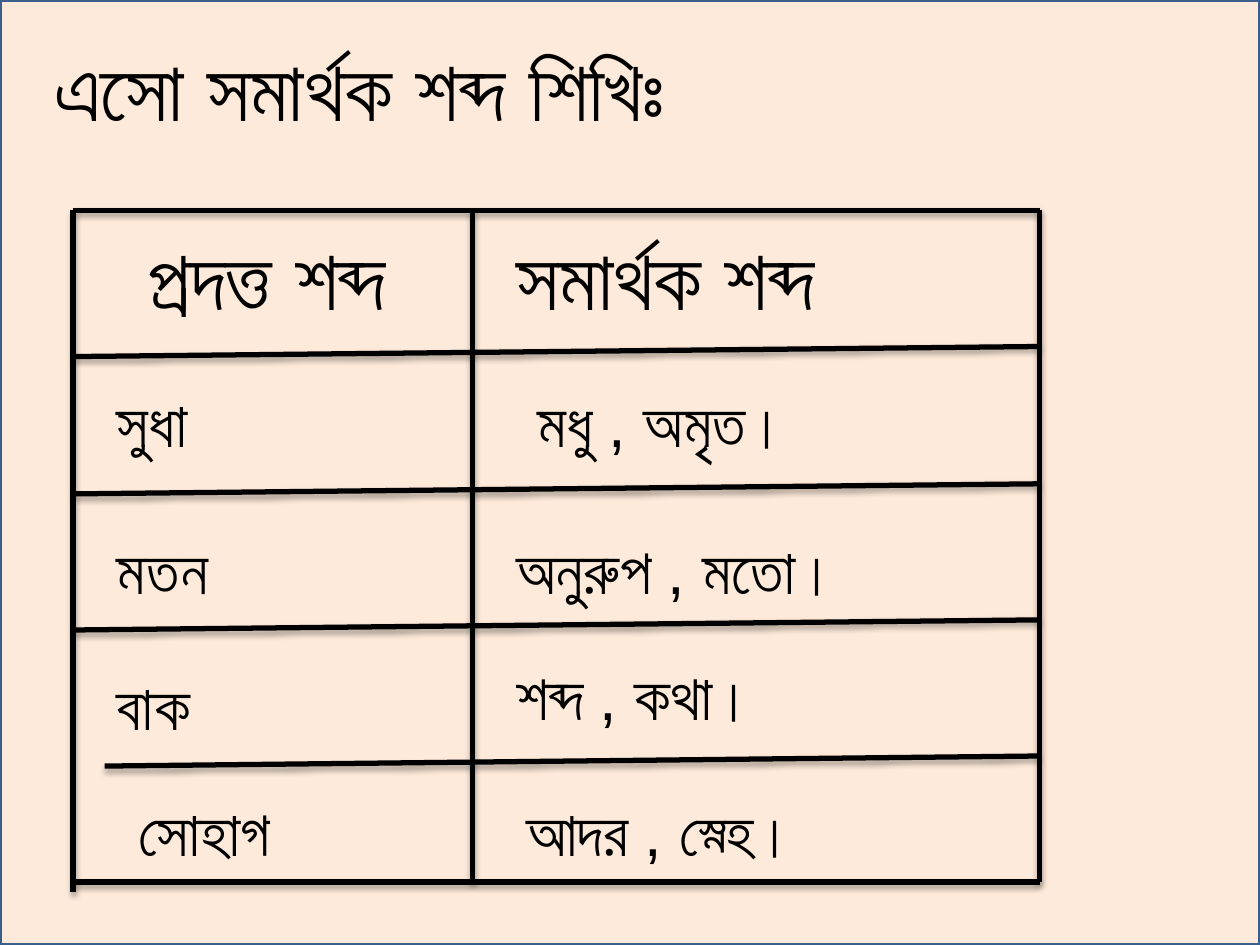
from lxml.etree import SubElement
from pptx import Presentation
from pptx.dml.color import RGBColor
from pptx.enum.shapes import MSO_CONNECTOR, MSO_SHAPE
from pptx.enum.text import MSO_ANCHOR, MSO_AUTO_SIZE, PP_ALIGN
from pptx.oxml.ns import qn
from pptx.util import Inches, Pt

BLACK = RGBColor(0x00, 0x00, 0x00)
CREAM = RGBColor(0xFD, 0xEA, 0xDA)
BLUE = RGBColor(0x3A, 0x5F, 0x8C)

HEAD = {"name": "Arial", "size": Pt(48), "bold": True}
WORD = {"name": "Arial", "size": Pt(36), "bold": False}
FRAME = {"word_wrap": True, "auto_size": MSO_AUTO_SIZE.SHAPE_TO_FIT_TEXT,
         "vertical_anchor": MSO_ANCHOR.TOP}
SHADE = {"blurRad": Pt(3.1), "dist": Pt(1.8), "dir": 90 * 60000,
         "algn": "ctr", "rotWithShape": 0}

LEFT, MID, RIGHT = 0.58, 3.75, 8.25
TOP, BASE = 1.67, 7
RISE = 0.08


def apply(target, values):
    for key, value in values.items():
        setattr(target, key, value)


class Board:
    """Holds the slide and draws each kind of element on it."""

    def __init__(self, deck):
        self.slide = deck.slides.add_slide(deck.slide_layouts[5])
        self.shapes = self.slide.shapes

    def back(self, width, height):
        """Put the framed backdrop behind the title."""
        rect = self.shapes.add_shape(MSO_SHAPE.RECTANGLE, 0, 0, width, height)
        rect.shadow.inherit = False
        rect.fill.solid()
        rect.fill.fore_color.rgb = CREAM
        rect.line.color.rgb = BLUE
        rect.line.width = Pt(2)
        self.shapes.title._element.addprevious(rect._element)

    def fill(self, box, text, style):
        frame = box.text_frame
        apply(frame, FRAME)
        para = frame.paragraphs[0]
        para.alignment = PP_ALIGN.LEFT
        run = para.add_run()
        run.text = text
        apply(run.font, style)
        run.font.color.rgb = BLACK

    def title(self, x, y, w, h, text):
        box = self.shapes.title
        apply(box, {"left": Inches(x), "top": Inches(y),
                    "width": Inches(w), "height": Inches(h)})
        self.fill(box, text, HEAD)

    def text(self, x, y, w, h, text, style):
        box = self.shapes.add_textbox(*map(Inches, (x, y, w, h)))
        self.fill(box, text, style)

    def line(self, *ends):
        rule = self.shapes.add_connector(
            MSO_CONNECTOR.STRAIGHT, *map(Inches, ends))
        rule.line.color.rgb = BLACK
        rule.line.width = Pt(3)
        effect = SubElement(rule._element.spPr, qn("a:effectLst"))
        shadow = SubElement(effect, qn("a:outerShdw"),
                            {key: str(val) for key, val in SHADE.items()})
        tint = SubElement(shadow, qn("a:srgbClr"), val=str(BLACK))
        SubElement(tint, qn("a:alpha"), val="35000")


def main():
    deck = Presentation()
    deck.slide_width, deck.slide_height = Inches(10), Inches(7.5)
    board = Board(deck)
    board.back(deck.slide_width, deck.slide_height)
    board.title(0.33, 0.25, 7.75, 0.91, "এসো সমার্থক শব্দ শিখিঃ")

    for y in (BASE, TOP):
        board.line(LEFT, y, RIGHT, y)
    for x, y in ((LEFT, 2.83), (LEFT, 3.92), (LEFT, 5), (0.83, 6.08)):
        board.line(x, y, RIGHT, y - RISE)
    for x, end in ((RIGHT, BASE), (LEFT, 7.08), (MID, BASE)):
        board.line(x, TOP, x, end)

    board.text(1.08, 1.75, 2.58, 0.91, "প্রদত্ত শব্দ", HEAD)
    board.text(4, 1.75, 3, 0.91, "সমার্থক শব্দ", HEAD)

    words = (
        (0.83, 3, 2.58, "সুধা"),
        (4.17, 3, 4.67, "মধু , অমৃত।"),
        (0.83, 4.17, 2.58, "মতন"),
        (4, 4.17, 5.33, "অনুরুপ , মতো।"),
        (0.83, 5.25, 2.67, "বাক"),
        (4, 5.17, 5.25, "শব্দ , কথা।"),
        (1, 6.25, 2, "সোহাগ"),
        (4.08, 6.25, 5.17, "আদর , স্নেহ।"),
    )
    for x, y, width, word in words:
        board.text(x, y, width, 0.71, word, WORD)

    deck.save("out.pptx")


if __name__ == "__main__":
    main()
